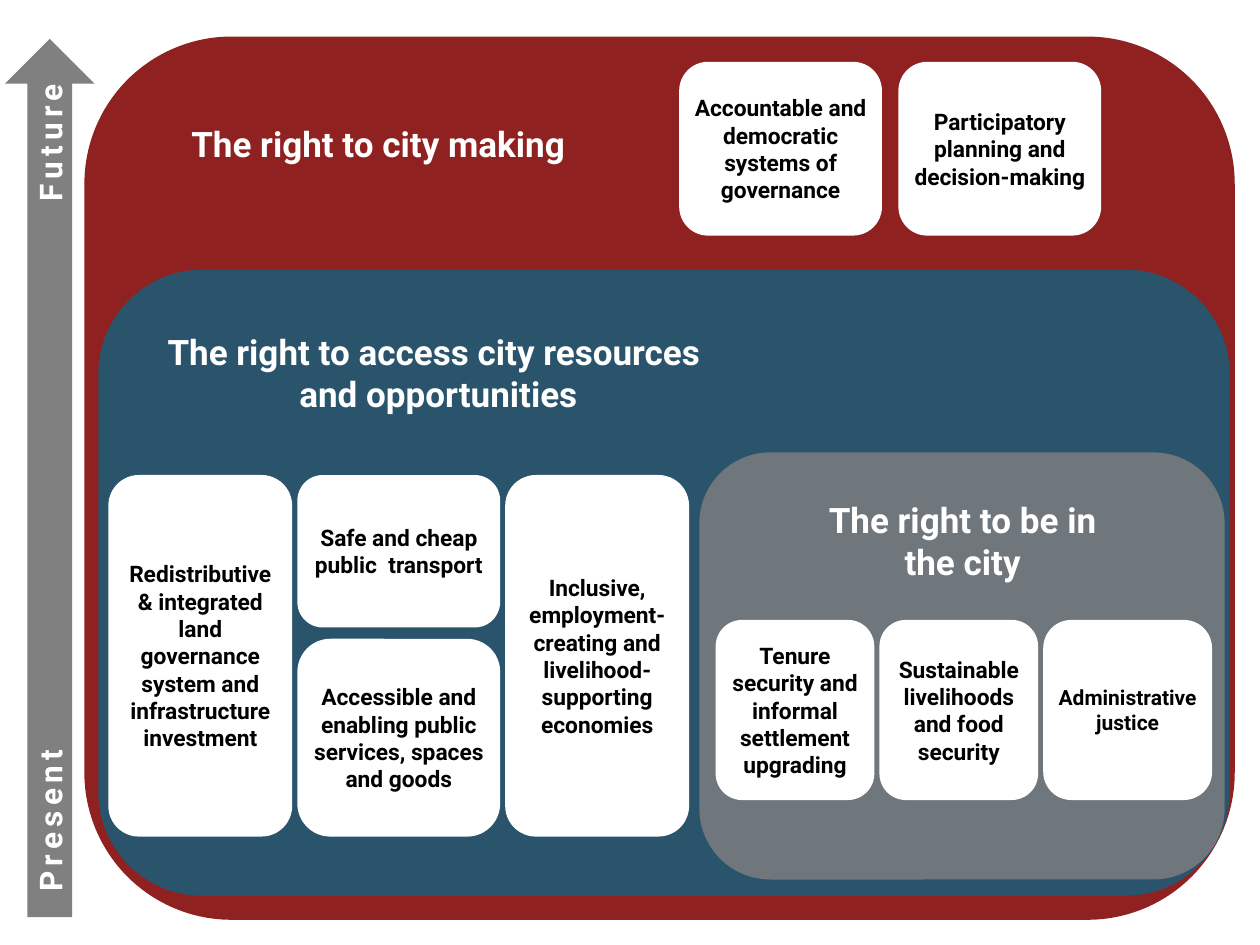
from lxml import etree
from pptx import Presentation
from pptx.dml.color import RGBColor
from pptx.enum.shapes import MSO_SHAPE
from pptx.enum.text import MSO_ANCHOR, PP_ALIGN
from pptx.oxml.ns import qn
from pptx.util import Inches, Pt

ROUNDED, UP_ARROW = MSO_SHAPE.ROUNDED_RECTANGLE, MSO_SHAPE.UP_ARROW
MIDDLE = MSO_ANCHOR.MIDDLE
LEFT, CENTER = PP_ALIGN.LEFT, PP_ALIGN.CENTER
WHITE = RGBColor(0xFF, 0xFF, 0xFF)
BLACK = RGBColor(0x00, 0x00, 0x00)
GREY = RGBColor(0x80, 0x80, 0x80)
MAROON = RGBColor(0x80, 0x00, 0x00)
BLUE = RGBColor(0x2A, 0x53, 0x6C)
FONT = "Roboto"

# Nested zones, outermost first: left, top, width, height, colour, opacity %
ZONES = [
    (0.67, 0.29, 9.13, 7.01, MAROON, 87),
    (0.78, 2.14, 8.98, 4.97, BLUE, 100),
    (5.55, 3.59, 4.17, 3.39, GREY, 82),
]

# Zone headings: left, top, width, height, alignment, paragraphs
HEADINGS = [
    (1.42, 0.92, 3.52, 0.44, LEFT, ["The right to city making"]),
    (1.00, 2.57, 4.96, 0.77, CENTER,
     ["The right to access city resources ", "and opportunities"]),
    (6.38, 3.91, 2.52, 0.77, CENTER, ["The right to be in the city"]),
]

# Card rows: columns run left to right, cards stack downwards in a column.
# Column: width, cards; card: height, text, text size, side inset
STACK_GAP = 0.09
CARD_ROWS = [
    {"left": 5.39, "top": 0.49, "gap": 0.13, "columns": [
        (1.61, [(1.38, "Accountable and democratic systems of governance", 13, 0.04)]),
        (1.61, [(1.38, "Participatory planning and decision-making", 13, 0.04)]),
    ]},
    {"left": 0.86, "top": 3.77, "gap": 0.04, "columns": [
        (1.46, [(2.87, "Redistributive\n& integrated land governance system "
                       "and infrastructure investment", 13, 0.04)]),
        (1.61, [(1.21, "Safe and cheap public  transport", 13, 0.04),
                (1.57, "Accessible and enabling public services, spaces and goods",
                 13, 0.04)]),
        (1.46, [(2.87, "Inclusive, employment-creating and livelihood-supporting "
                       "economies", 13, 0.04)]),
    ]},
    {"left": 5.68, "top": 4.92, "gap": 0.04, "columns": [
        (1.26, [(1.43, "Tenure security and informal settlement upgrading", 13, 0.04)]),
        (1.26, [(1.43, "Sustainable livelihoods and food security", 13, 0.04)]),
        (1.34, [(1.43, "Administrative justice", 12, 0)]),
    ]},
]

deck = Presentation()
deck.slide_width, deck.slide_height = Inches(10), Inches(7.5)
page = deck.slides.add_slide(deck.slide_layouts[6])


def add_block(kind, left, top, width, height, color, opacity=100):
    block = page.shapes.add_shape(
        kind, Inches(left), Inches(top), Inches(width), Inches(height))
    block.shadow.inherit = False
    block.fill.solid()
    block.fill.fore_color.rgb = color
    block.line.fill.background()
    if opacity < 100:
        tint = block.fill._xPr.find(".//" + qn("a:srgbClr"))
        etree.SubElement(tint, qn("a:alpha")).set("val", str(opacity * 1000))
    return block


def add_text(para, text, size, color, align):
    para.alignment = align
    for number, line in enumerate(text.split("\n")):
        if number:
            para.add_line_break()
        span = para.add_run()
        span.text = line
        span.font.name, span.font.size = FONT, Pt(size)
        span.font.bold = True
        span.font.color.rgb = color
    return span


# Time arrow, read upwards; a tab stop places the second word
arrow = add_block(UP_ARROW, 0.04, 0.31, 0.71, 6.97, GREY)
frame = arrow.text_frame
frame.vertical_anchor = MIDDLE
frame._txBody.bodyPr.set("vert", "vert270")
para = frame.paragraphs[0]
span = add_text(para, " Present\tFuture", 18, WHITE, LEFT)
span.font._element.set("spc", "300")
tabs = etree.SubElement(para._p.get_or_add_pPr(), qn("a:tabLst"))
etree.SubElement(tabs, qn("a:tab"), pos=str(Inches(5.58)), algn="l")

# Zones
for zone in ZONES:
    add_block(ROUNDED, *zone)

# Headings
for left, top, width, height, align, lines in HEADINGS:
    box = page.shapes.add_textbox(
        Inches(left), Inches(top), Inches(width), Inches(height))
    frame = box.text_frame
    frame.word_wrap = True
    for number, line in enumerate(lines):
        para = frame.add_paragraph() if number else frame.paragraphs[0]
        add_text(para, line, 20, WHITE, align)

# Cards
for row in CARD_ROWS:
    left = row["left"]
    for width, cards in row["columns"]:
        top = row["top"]
        for height, text, size, inset in cards:
            card = add_block(ROUNDED, left, top, width, height, WHITE)
            frame = card.text_frame
            frame.word_wrap = True
            frame.vertical_anchor = MIDDLE
            frame.margin_left = frame.margin_right = Inches(inset)
            add_text(frame.paragraphs[0], text, size, BLACK, CENTER)
            top += height + STACK_GAP
        left += width + row["gap"]

deck.save("out.pptx")
